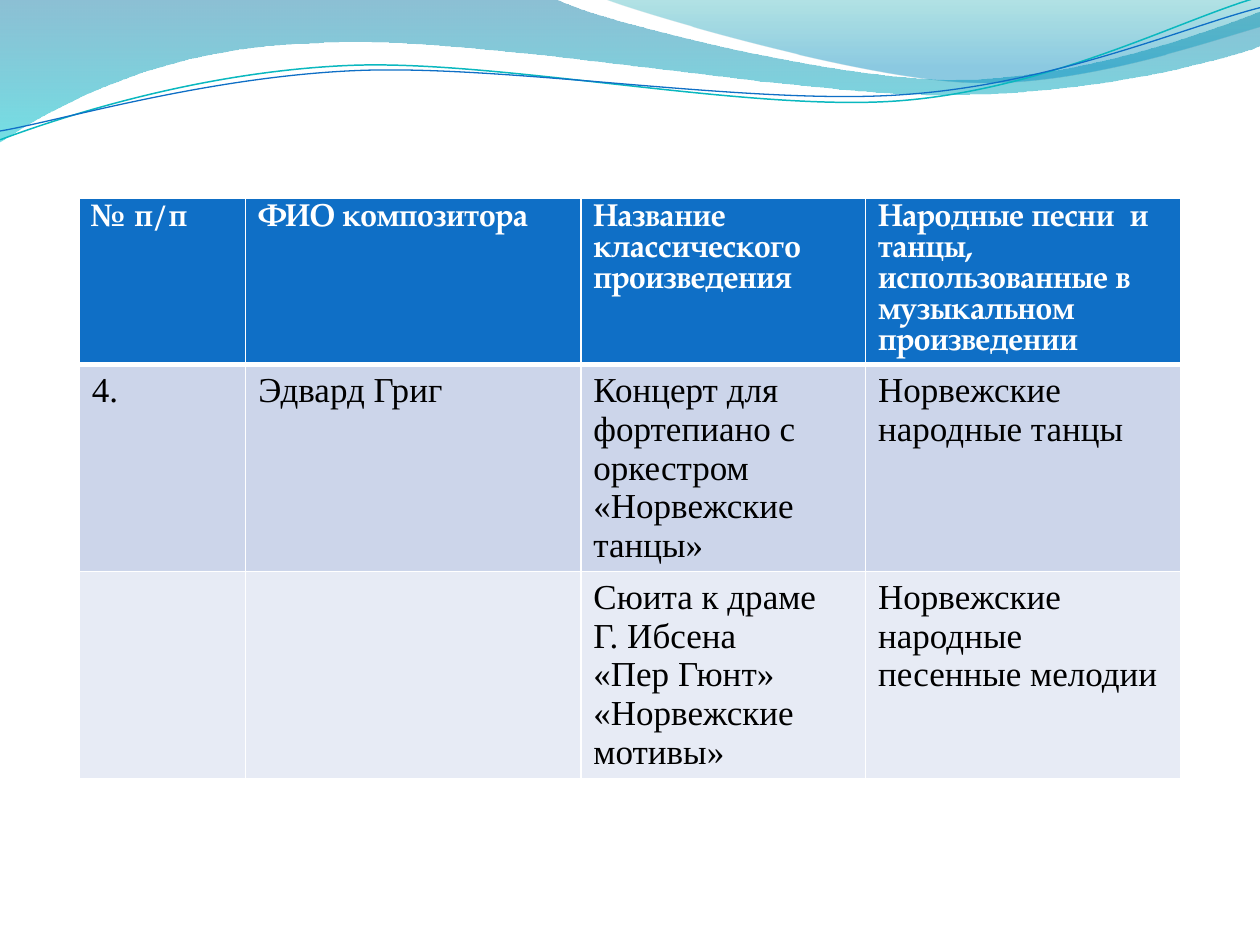
from dataclasses import dataclass
from math import cos, radians, sin

from lxml import etree
from pptx import Presentation
from pptx.dml.color import RGBColor
from pptx.oxml.ns import qn
from pptx.util import Inches, Pt

BLANK_LAYOUT = 6
UNITS_PER_INCH = 1000


@dataclass(frozen=True)
class Theme:
    header_fill: str = "0F6FC6"
    header_text: str = "FFFFFF"
    header_font: str = "TeX Gyre Pagella"
    header_size: int = 18
    body_fills: tuple = ("CCD5EA", "E7EBF5")
    body_text: str = "000000"
    body_font: str = "Times New Roman"
    body_size: int = 20
    border: str = "FFFFFF"
    border_width: int = 1
    header_rule_width: int = 3
    # Gradient stops: position, colour, opacity in percent
    wide_wave: tuple = ((0, "0074A1", 45), (1, "00C6CF", 55))
    corner_wave: tuple = ((0, "00A1A9", 30), (0.8, "008BBF", 45))
    teal_line: str = "0AB8BF"
    blue_line: str = "0F6FC6"


THEME = Theme()

TABLE_LEFT, TABLE_TOP = 0.63, 1.57
COLUMN_WIDTHS = (1.32, 2.66, 2.26, 2.5)
MINIMUM_ROW_HEIGHT = 0.41  # rows grow to fit their text
TABLE_ROWS = (
    ("№ п/п", "ФИО композитора", "Название классического произведения",
     "Народные песни  и танцы, использованные в музыкальном произведении"),
    ("4.", "Эдвард Григ", "Концерт для фортепиано с оркестром «Норвежские танцы»",
     "Норвежские народные танцы"),
    ("", "", "Сюита к драме\nГ. Ибсена\n«Пер Гюнт» «Норвежские мотивы»",
     "Норвежские  народные песенные мелодии"),
)

# A path is a list of steps: one point is a line, three points are a curve.
WIDE_WAVE = (
    ((0, 0),),
    ((4.4, -0.01),),
    ((4.76, 0.17), (6.64, 0.63), (7.58, 0.63)),
    ((8.53, 0.63), (9.58, 0.26), (10, 0.09)),
    ((10.01, 0.36),),
    ((9.83, 0.44), (8.7, 0.76), (7.46, 0.75)),
    ((6.22, 0.75), (3.82, 0.28), (2.57, 0.34)),
    ((1.29, 0.36), (0.46, 0.83), (-0.01, 1.13)),
)
CORNER_WAVE = (
    ((4.79, -0.01),),
    ((5.09, 0.11), (6.82, 0.62), (7.69, 0.65)),
    ((8.56, 0.69), (9.61, 0.32), (10, 0.21)),
    ((10, 0),),
)
TEAL_CURVE = (
    ((0, 1.11),),
    ((0.48, 0.93), (1.58, 0.57), (2.77, 0.52)),
    ((3.95, 0.47), (5.93, 0.89), (7.13, 0.8)),
    ((8.33, 0.71), (9.38, 0.15), (9.98, -0.02)),
)
BLUE_CURVE = (
    ((0, 1.04),),
    ((0.47, 0.96), (1.64, 0.61), (2.83, 0.56)),
    ((4.03, 0.51), (5.97, 0.84), (7.17, 0.75)),
    ((8.36, 0.67), (9.41, 0.21), (10, 0.06)),
)
CURVE_TILT = -2.7
CURVE_CENTER = (4.99, 0.58)


def color(value):
    return RGBColor.from_string(value)


def untilt(point):
    """Turn a point back, so that the tilted shape puts it in its place."""
    angle = radians(-CURVE_TILT)
    x, y = (value - center for value, center in zip(point, CURVE_CENTER))
    return (CURVE_CENTER[0] + x * cos(angle) - y * sin(angle),
            CURVE_CENTER[1] + x * sin(angle) + y * cos(angle))


def add_outline(slide, path, close):
    """Build a freeform through the end points, then bend its curved steps."""
    steps = [[(round(x * UNITS_PER_INCH), round(y * UNITS_PER_INCH)) for x, y in step]
             for step in path]
    anchors = [step[-1] for step in steps]
    builder = slide.shapes.build_freeform(*anchors[0], scale=Inches(1) / UNITS_PER_INCH)
    builder.add_line_segments(anchors[1:], close=close)
    shape = builder.convert_to_shape()
    shape.shadow.inherit = False

    left, top = (min(values) for values in zip(*anchors))
    segments = list(shape.element.spPr.iter(qn("a:lnTo")))
    for segment, step in zip(segments, steps[1:]):
        if len(step) == 3:
            curve = etree.Element(qn("a:cubicBezTo"))
            for x, y in step:
                etree.SubElement(curve, qn("a:pt"), x=str(x - left), y=str(y - top))
            segment.getparent().replace(segment, curve)
    return shape


def add_wave(slide, path, stops):
    shape = add_outline(slide, path, close=True)
    shape.line.fill.background()
    shape.fill.gradient()
    shape.fill.gradient_angle = 270
    elements = shape.element.spPr.iter(qn("a:gs"))
    for stop, element, (position, value, opacity) in zip(
            shape.fill.gradient_stops, elements, stops):
        stop.position = position
        stop.color.rgb = color(value)
        alpha = etree.SubElement(element.find(qn("a:srgbClr")), qn("a:alpha"))
        alpha.set("val", str(opacity * 1000))


def add_curve(slide, path, value, width):
    level_path = [[untilt(point) for point in step] for step in path]
    shape = add_outline(slide, level_path, close=False)
    shape.rotation = CURVE_TILT
    shape.fill.background()
    shape.line.color.rgb = color(value)
    shape.line.width = Pt(width)


def set_borders(cell, is_header):
    properties = cell._tc.get_or_add_tcPr()
    for side in ("lnL", "lnR", "lnT", "lnB"):
        thick = is_header and side == "lnB"
        width = THEME.header_rule_width if thick else THEME.border_width
        line = etree.SubElement(properties, qn(f"a:{side}"), w=str(Pt(width)))
        fill = etree.SubElement(line, qn("a:solidFill"))
        etree.SubElement(fill, qn("a:srgbClr"), val=THEME.border)


def fill_cell(cell, text, row_index):
    is_header = row_index == 0
    set_borders(cell, is_header)
    cell.fill.solid()
    cell.fill.fore_color.rgb = color(
        THEME.header_fill if is_header else THEME.body_fills[row_index - 1])
    cell.text = text
    for paragraph in cell.text_frame.paragraphs:
        font = paragraph.font
        font.name = THEME.header_font if is_header else THEME.body_font
        font.size = Pt(THEME.header_size if is_header else THEME.body_size)
        font.bold = is_header
        font.color.rgb = color(THEME.header_text if is_header else THEME.body_text)


def add_composer_table(slide):
    table = slide.shapes.add_table(
        len(TABLE_ROWS), len(COLUMN_WIDTHS), Inches(TABLE_LEFT), Inches(TABLE_TOP),
        Inches(sum(COLUMN_WIDTHS)), Inches(MINIMUM_ROW_HEIGHT * len(TABLE_ROWS))).table
    for column, width in zip(table.columns, COLUMN_WIDTHS):
        column.width = Inches(width)
    for row_index, (row, texts) in enumerate(zip(table.rows, TABLE_ROWS)):
        for cell, text in zip(row.cells, texts):
            fill_cell(cell, text, row_index)


def main():
    presentation = Presentation()
    presentation.slide_width = Inches(10)
    presentation.slide_height = Inches(7.5)
    slide = presentation.slides.add_slide(presentation.slide_layouts[BLANK_LAYOUT])
    add_wave(slide, WIDE_WAVE, THEME.wide_wave)
    add_wave(slide, CORNER_WAVE, THEME.corner_wave)
    add_curve(slide, TEAL_CURVE, THEME.teal_line, 0.85)
    add_curve(slide, BLUE_CURVE, THEME.blue_line, 0.75)
    add_composer_table(slide)
    presentation.save("out.pptx")


if __name__ == "__main__":
    main()
